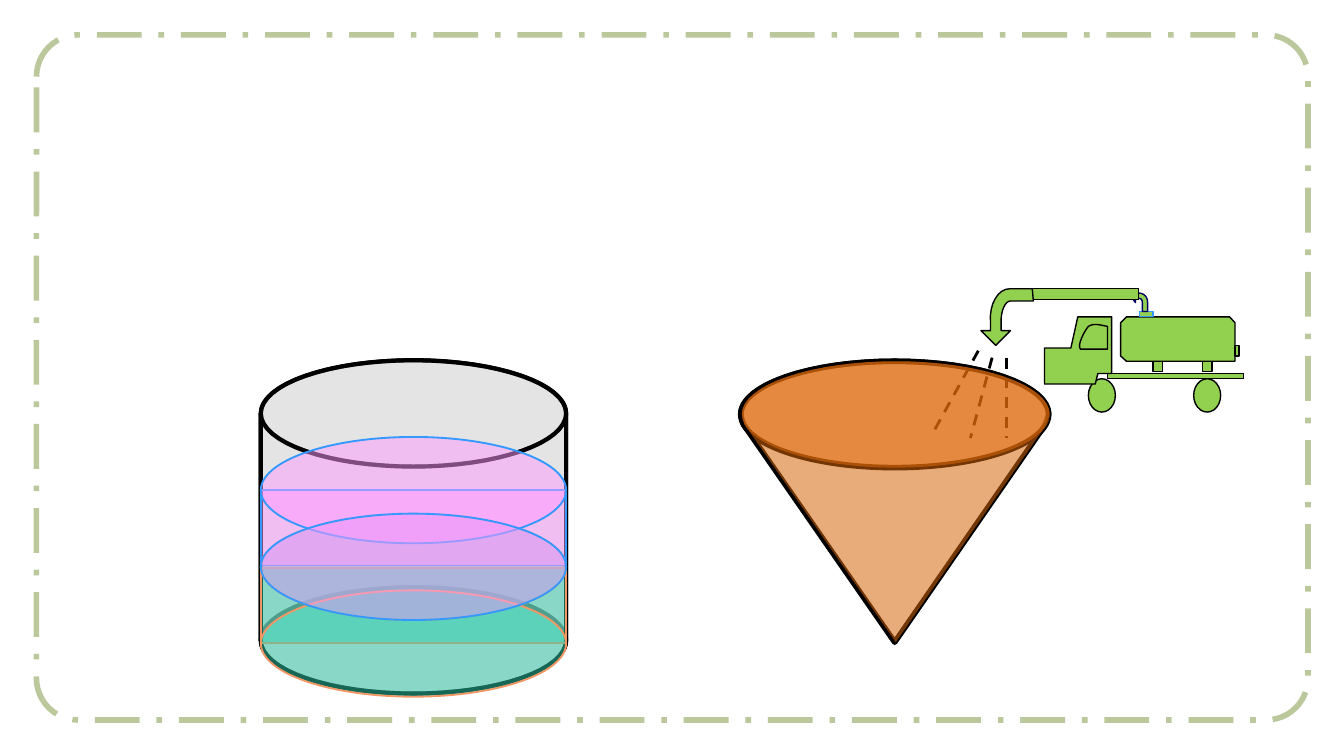
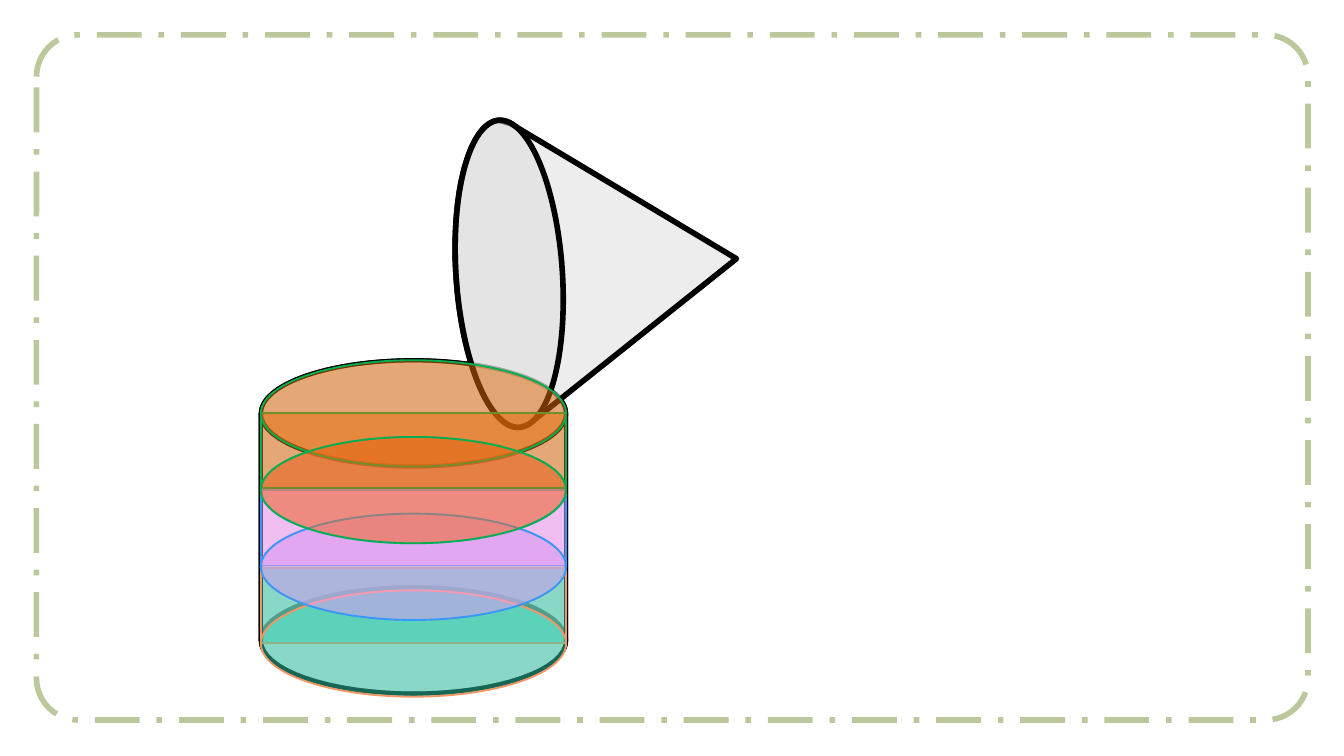
from math import cos, pi, sin

from lxml.etree import SubElement
from pptx import Presentation
from pptx.dml.color import RGBColor
from pptx.enum.dml import MSO_LINE as Dash
from pptx.enum.shapes import MSO_CONNECTOR as Link, MSO_SHAPE as Form
from pptx.oxml.ns import qn
from pptx.util import Cm, Pt

WHITE = RGBColor(0xFF, 0xFF, 0xFF)
BLACK = RGBColor(0x00, 0x00, 0x00)
SAGE = RGBColor(0xBA, 0xC8, 0x9B)
GRAY = RGBColor(0xDD, 0xDD, 0xDD)
LIME = RGBColor(0x92, 0xD0, 0x50)
NAVY = RGBColor(0x00, 0x00, 0x66)
BLUE = RGBColor(0x33, 0x99, 0xFF)
TEAL = RGBColor(0x2F, 0xCE, 0xAC)
PEACH = RGBColor(0xF2, 0x97, 0x64)
PINK = RGBColor(0xFF, 0x99, 0xFF)
AMBER = RGBColor(0xE4, 0x6C, 0x0A)
GREEN = RGBColor(0x00, 0xB0, 0x50)

# Cylinder and cone sizes in centimetres
LEFT, TOP, WIDE, RIM, DEEP = 4.93, 6.81, 5.77, 2.01, 4.29
CONE_W, CONE_H = 5.82, 5.31


def arc(left, mid, wide, start, end, count=32):
    """Points on a rim, from one angle to another; y grows downwards."""
    turns = [start + (end - start) * i / count for i in range(count + 1)]
    return [(left + wide / 2 * (1 + cos(t)), mid + RIM / 2 * sin(t))
            for t in turns]


def trace(steps, count=8):
    """Turn points (x, y) and Bezier steps (x1, y1, x2, y2, x, y) to points."""
    points = []
    for step in steps:
        if len(step) == 2:
            points.append(step)
            continue
        knots = [points[-1], step[:2], step[2:4], step[4:]]
        for i in range(1, count + 1):
            t = i / count
            parts = ((1 - t) ** 3, 3 * t * (1 - t) ** 2,
                     3 * t * t * (1 - t), t ** 3)
            points.append(tuple(sum(p * k[axis] for p, k in zip(parts, knots))
                                for axis in (0, 1)))
    return points


class Deck:
    def __init__(self):
        self.prs = Presentation()
        self.prs.slide_width, self.prs.slide_height = Cm(25.4), Cm(14.29)

    def page(self):
        self.slide = self.prs.slides.add_slide(self.prs.slide_layouts[6])
        self.box = self.slide.shapes
        frame = self.shape(Form.ROUNDED_RECTANGLE, (0.69, 0.66, 24.03, 12.95),
                           WHITE, SAGE, 3)
        frame.adjustments[0] = 0.061
        frame.line.dash_style = Dash.LONG_DASH_DOT

    def group(self):
        self.box = self.slide.shapes.add_group_shape().shapes

    def paint(self, item, fill, line, size, alpha):
        item.shadow.inherit = False
        item.fill.solid()
        item.fill.fore_color.rgb = fill
        if alpha < 100:
            tint = item._element.spPr.find(qn("a:solidFill"))[0]
            SubElement(tint, qn("a:alpha")).set("val", str(alpha * 1000))
        if line is None:
            item.line.fill.background()
        else:
            item.line.color.rgb = line
            item.line.width = Pt(size)
        return item

    def shape(self, form, area, fill, line=BLACK, size=0.75, alpha=100):
        item = self.box.add_shape(form, *map(Cm, area))
        return self.paint(item, fill, line, size, alpha)

    def outline(self, points, fill, line=BLACK, size=0.75, alpha=100):
        spots = [(Cm(x), Cm(y)) for x, y in points]
        pen = self.box.build_freeform(*spots[0])
        pen.add_line_segments(spots[1:], close=True)
        return self.paint(pen.convert_to_shape(), fill, line, size, alpha)

    def line(self, ends, color, size, dash=None):
        item = self.box.add_connector(Link.STRAIGHT, *map(Cm, ends))
        item.line.color.rgb = color
        item.line.width = Pt(size)
        if dash:
            item.line.dash_style = dash
        SubElement(item._element.spPr, qn("a:effectLst"))

    def tube(self):
        """The empty cylinder: two rims, a back wall and a front wall."""
        self.group()
        look = (GRAY, BLACK, 2.25, 50)
        for top in (TOP + DEEP, TOP):
            self.shape(Form.OVAL, (LEFT, top, WIDE, RIM), *look)
        high, low = TOP + RIM / 2, TOP + DEEP + RIM / 2
        for end, first, last in ((2 * pi, high, low), (0, low, high)):
            wall = arc(LEFT, first, WIDE, pi, end)
            wall += arc(LEFT, last, WIDE, end, pi)
            self.outline(wall, *look)

    def layer(self, level, fill, line):
        """One third of the filling; level 0 is the top one."""
        self.group()
        top, high = 7.8 + 1.47 * level, 1.42
        self.shape(Form.RECTANGLE, (LEFT, top, WIDE, high), fill, line, 1, 50)
        for x in (LEFT, LEFT + WIDE):
            self.line((x, top, x, top + high), line, 1)
        for step in (level, level + 1):
            area = (LEFT, TOP + 1.45 * step, WIDE, RIM)
            self.shape(Form.OVAL, area, fill, line, 1, 50)

    def cone(self, left, top, fill, line, turn=0):
        """A cone standing on its tip, turned about its own centre."""
        self.group()
        body = [(left + 0.05, top + 1.19), (left + CONE_W / 2, top + CONE_H),
                (left + CONE_W - 0.08, top + 1.22)]
        body += arc(left, top + RIM / 2, CONE_W, 2 * pi, pi)
        self.outline(body, fill, line, 3, 50).rotation = turn
        angle, reach = turn * pi / 180, (CONE_H - RIM) / 2
        x = left + reach * sin(angle)
        y = top + reach * (1 - cos(angle))
        lid = self.shape(Form.OVAL, (x, y, CONE_W, RIM), fill, line, 3, 50)
        lid.rotation = turn

    def truck(self):
        self.group()
        # Wheels, chassis and posts
        for x in (22.56, 20.57):
            self.shape(Form.OVAL, (x, 7.16, 0.51, 0.63), LIME)
        self.shape(Form.RECTANGLE, (20.93, 7.06, 2.57, 0.1), LIME)
        for x in (22.73, 21.79):
            self.shape(Form.RECTANGLE, (x, 6.83, 0.18, 0.2), LIME)
        # Cab, window and tank
        cab = [(21.01, 7.06), (21.01, 5.99), (20.37, 5.99), (20.24, 6.58),
               (19.74, 6.58), (19.74, 7.26), (20.7, 7.26), (20.75, 7.06)]
        pane = [(20.93, 6.17), (20.8, 6.15, 20.68, 6.1, 20.57, 6.17),
                (20.5, 6.25, 20.35, 6.53, 20.42, 6.6), (20.93, 6.6)]
        tank = [(23.34, 6.83), (21.29, 6.83), (21.18, 6.73), (21.18, 6.1),
                (21.29, 5.99), (23.24, 5.99), (23.34, 6.1)]
        for part in (cab, pane, tank):
            self.outline(trace(part), LIME)
        # Valves, hose and spout
        self.shape(Form.RECTANGLE, (21.54, 5.89, 0.25, 0.1), LIME, BLUE)
        self.shape(Form.RECTANGLE, (23.34, 6.53, 0.08, 0.2), LIME)
        hose = [(21.36, 5.59), (21.46, 5.46), (21.46, 5.54), (21.51, 5.54),
                (21.62, 5.54, 21.69, 5.61, 21.69, 5.72), (21.69, 5.89),
                (21.59, 5.89), (21.59, 5.72),
                (21.59, 5.66, 21.56, 5.64, 21.51, 5.64), (21.46, 5.64),
                (21.46, 5.72)]
        self.outline(trace(hose), LIME, NAVY)
        self.shape(Form.RECTANGLE, (19.13, 5.46, 2.39, 0.2), LIME)
        spout = [(18.82, 6.53), (18.54, 6.25), (18.72, 6.25), (18.72, 6.1),
                 (18.69, 5.74, 18.87, 5.46, 19.08, 5.46), (19.51, 5.46),
                 (19.53, 5.69), (19.1, 5.69),
                 (19, 5.69, 18.92, 5.87, 18.92, 6.07), (18.92, 6.25),
                 (19.1, 6.25)]
        self.outline(trace(spout), LIME)

    def spray(self):
        self.group()
        for ends in ((18.49, 6.63, 17.65, 8.15), (19.02, 6.76, 19.02, 8.28),
                     (18.75, 6.76, 18.34, 8.28)):
            self.line(ends, BLACK, 1.5, Dash.DASH)


def main():
    deck = Deck()
    fills = [(2, TEAL, PEACH), (1, PINK, BLUE), (0, AMBER, GREEN)]

    # Slide 1: the truck fills the cone, two thirds are in the cylinder
    deck.page()
    deck.tube()
    deck.truck()
    deck.cone(14, 6.83, GRAY, BLACK)
    deck.spray()
    deck.cone(14.02, 6.83, AMBER, None)
    for fill in fills[:2]:
        deck.layer(*fill)

    # Slide 2: the tilted cone has filled the cylinder
    deck.page()
    deck.tube()
    deck.cone(8.36, 2.41, GRAY, BLACK, 266.2)
    for fill in fills:
        deck.layer(*fill)

    deck.prs.save("out.pptx")


if __name__ == "__main__":
    main()
